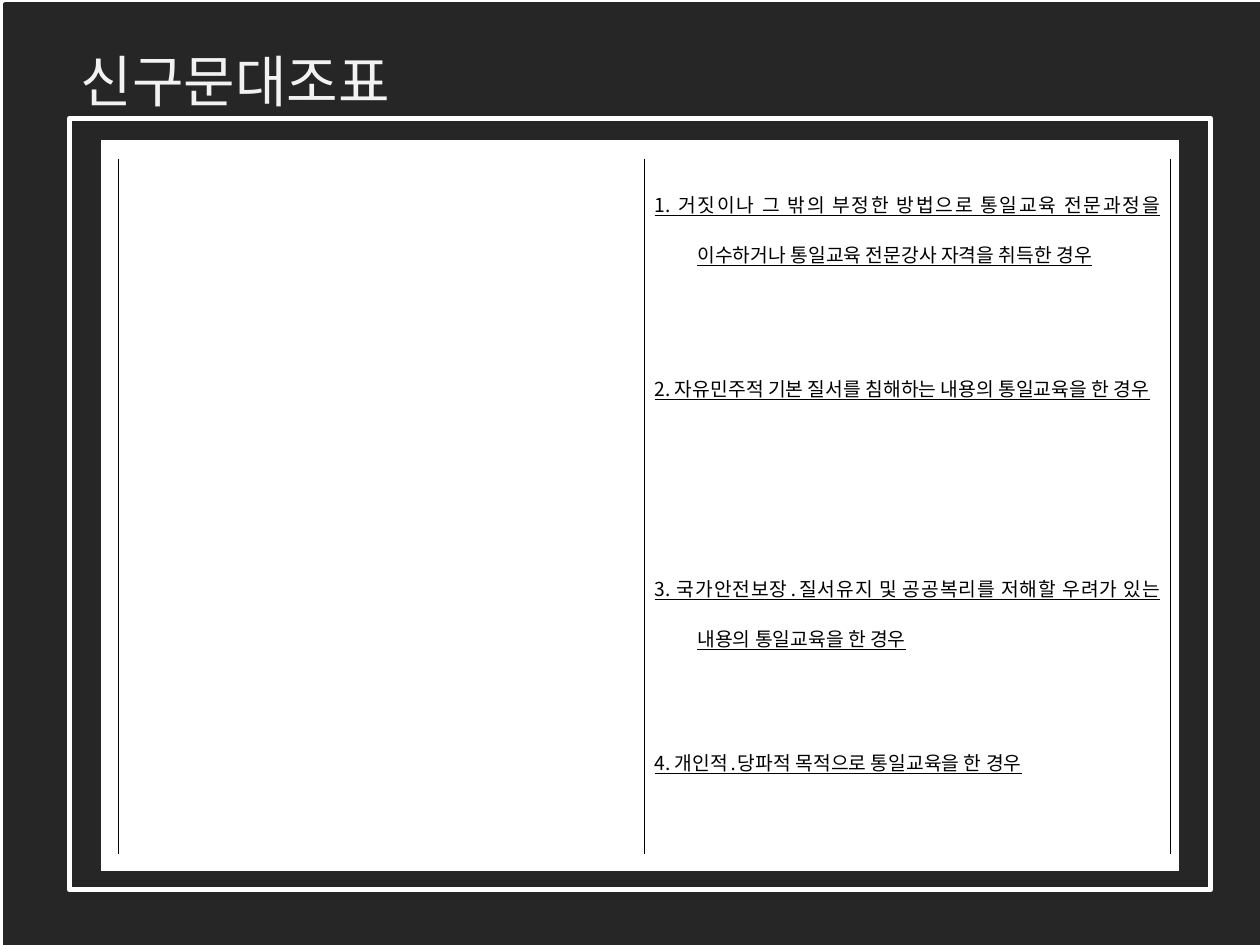
from lxml import etree
from pptx import Presentation
from pptx.dml.color import RGBColor
from pptx.enum import shapes, text
from pptx.oxml import ns
from pptx.util import Inches, Pt

FONT = "Noto Sans CJK KR"
DARK = RGBColor(0x26, 0x26, 0x26)
LIGHT = RGBColor(0xF2, 0xF2, 0xF2)
WHITE = RGBColor(0xFF, 0xFF, 0xFF)
BLACK = RGBColor(0, 0, 0)

ROW_HEIGHTS = [1.46, 1.59, 1.38, 1.09]
CLAUSES = [
    "1. 거짓이나 그 밖의 부정한 방법으로 통일교육 전문과정을 이수하거나 통일교육 전문강사 자격을 취득한 경우",
    "2. 자유민주적 기본 질서를 침해하는 내용의 통일교육을 한 경우",
    "3. 국가안전보장․질서유지 및 공공복리를 저해할 우려가 있는 내용의 통일교육을 한 경우",
    "4. 개인적․당파적 목적으로 통일교육을 한 경우",
]


def write_text(tf, content, size, color, align, underline=None, spacing=None, hanging=0):
    p = tf.paragraphs[0]
    p.alignment = align
    p.line_spacing = spacing
    if hanging:
        pPr = p._p.get_or_add_pPr()
        pPr.set("marL", str(Inches(hanging)))
        pPr.set("indent", str(-Inches(hanging)))
    r = p.add_run()
    r.text = content
    r.font.name = FONT
    r.font.size = Pt(size)
    r.font.bold = False
    r.font.underline = underline
    r.font.color.rgb = color
    ea = etree.SubElement(r.font._element, ns.qn("a:ea"))
    ea.set("typeface", FONT)


def add_rect(slide, left, top, width, height, fill, line, weight):
    sp = slide.shapes.add_shape(
        shapes.MSO_SHAPE.RECTANGLE,
        Inches(left), Inches(top), Inches(width), Inches(height))
    sp.shadow.inherit = False
    if fill is None:
        sp.fill.background()
    else:
        sp.fill.solid()
        sp.fill.fore_color.rgb = fill
    sp.line.color.rgb = line
    sp.line.width = Pt(weight)
    return sp


def place_title(slide, content):
    sp = slide.shapes.title
    sp.left, sp.top, sp.width, sp.height = map(Inches, (0.54, 0.31, 9, 0.66))
    sp.text_frame.vertical_anchor = text.MSO_ANCHOR.MIDDLE
    write_text(sp.text_frame, content, 32, LIGHT, text.PP_ALIGN.LEFT)
    return sp


def set_borders(cell):
    tcPr = cell._tc.get_or_add_tcPr()
    for i, side in enumerate(("lnL", "lnR", "lnT", "lnB")):
        ln = etree.Element(ns.qn("a:" + side), w=str(Pt(0.28)))
        if side in ("lnL", "lnR"):
            fill = etree.SubElement(ln, ns.qn("a:solidFill"))
            etree.SubElement(fill, ns.qn("a:srgbClr"), val=str(BLACK))
        else:
            etree.SubElement(ln, ns.qn("a:noFill"))
        tcPr.insert(i, ln)


def add_clause_table(slide):
    table = slide.shapes.add_table(
        len(CLAUSES), 2, Inches(0.94), Inches(1.26),
        Inches(8.35), Inches(sum(ROW_HEIGHTS))).table
    table.first_row = False
    table.horz_banding = False
    for row, height, clause in zip(table.rows, ROW_HEIGHTS, CLAUSES):
        row.height = Inches(height)
        for cell in row.cells:
            cell.margin_left = cell.margin_right = Inches(0.08)
            cell.margin_top = cell.margin_bottom = Inches(0.07)
            cell.fill.background()
            set_borders(cell)
        write_text(row.cells[1].text_frame, clause, 11, BLACK,
                   text.PP_ALIGN.JUSTIFY, underline=True, spacing=1.8, hanging=0.34)


def main():
    prs = Presentation()
    prs.slide_width, prs.slide_height = Inches(10), Inches(7.5)
    slide = prs.slides.add_slide(prs.slide_layouts[5])
    backdrop = add_rect(slide, 0.04, 0.03, 10, 7.5, DARK, DARK, 2)
    title = place_title(slide, "신구문대조표")
    backdrop.element.addnext(title.element)
    add_rect(slide, 0.55, 0.94, 9.06, 6.12, None, WHITE, 3)
    add_rect(slide, 0.79, 1.1, 8.58, 5.83, WHITE, DARK, 2)
    add_clause_table(slide)
    prs.save("out.pptx")


if __name__ == "__main__":
    main()
